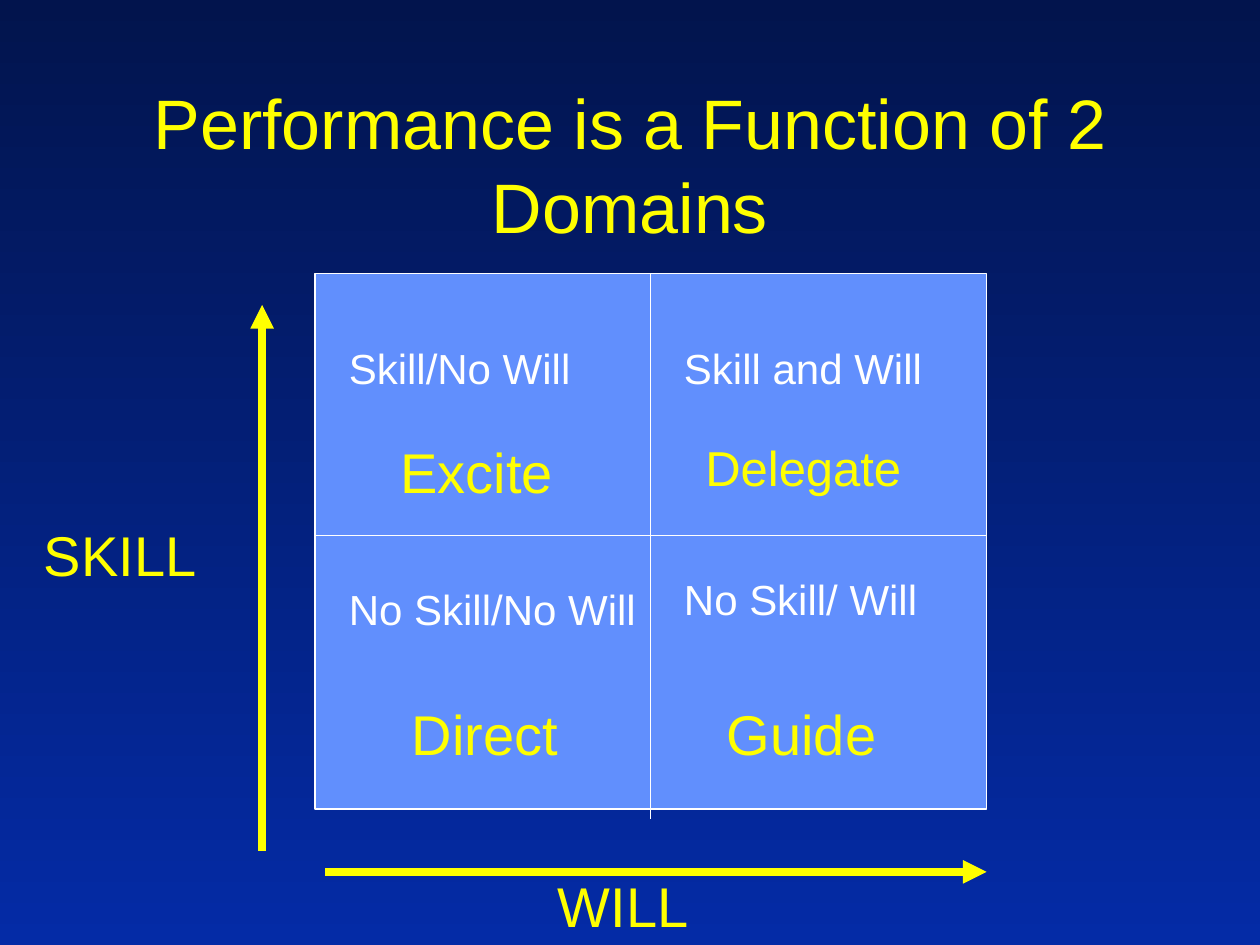
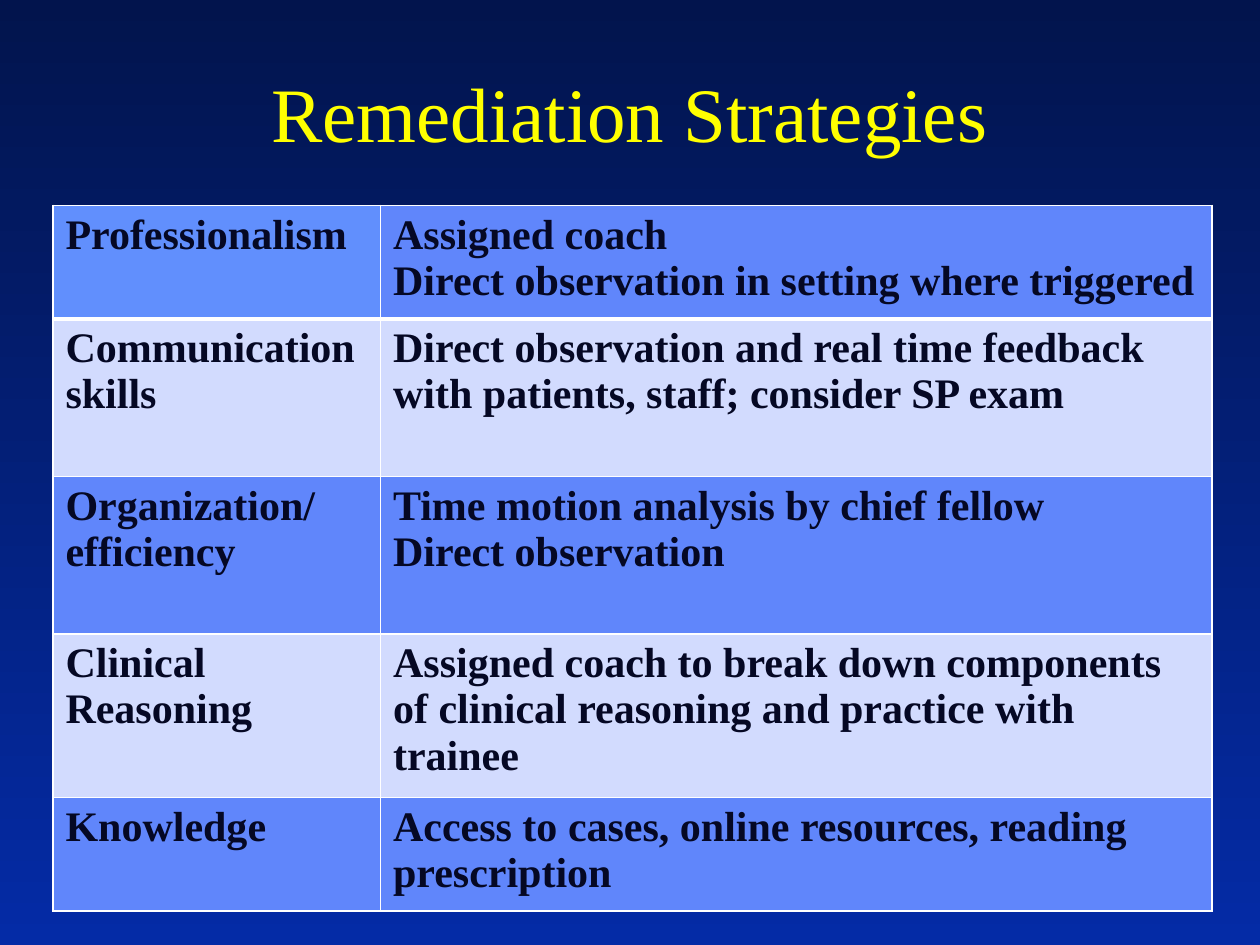
"""Build two slides on trainee performance domains and remediation strategies."""
from lxml import etree
from pptx import Presentation
from pptx.dml.color import RGBColor
from pptx.enum.shapes import MSO_CONNECTOR, MSO_SHAPE
from pptx.enum.text import MSO_ANCHOR, MSO_AUTO_SIZE, PP_ALIGN
from pptx.oxml.ns import qn
from pptx.util import Inches, Pt

STRAIGHT = MSO_CONNECTOR.STRAIGHT
RECTANGLE = MSO_SHAPE.RECTANGLE
MIDDLE = MSO_ANCHOR.MIDDLE
FIT_TEXT = MSO_AUTO_SIZE.SHAPE_TO_FIT_TEXT
CENTER = PP_ALIGN.CENTER

COLORS = {
    "night": "02144D",
    "royal": "042BA6",
    "yellow": "FFFF00",
    "white": "FFFFFF",
    "sky": "618FFD",
    "band": "6086FB",
    "pale": "D2DBFE",
    "ink": "050824",
}
SANS = "Arial"
SERIF = "Times New Roman"


def rgb(name):
    """Return the named colour."""
    return RGBColor.from_string(COLORS[name])


class Deck:
    """Hold the shared style and the current slide."""

    def __init__(self):
        """Start an empty 4:3 presentation."""
        self.prs = Presentation()
        self.prs.slide_width = Inches(10)
        self.prs.slide_height = Inches(7.5)
        self.slide = None

    def new_slide(self, title, top, font, size):
        """Add a slide with the gradient background and a centred title."""
        self.slide = self.prs.slides.add_slide(self.prs.slide_layouts[6])
        fill = self.slide.background.fill
        fill.gradient()
        fill.gradient_angle = 270
        for stop, name in zip(fill.gradient_stops, ("night", "royal")):
            stop.color.rgb = rgb(name)
        heading = self.slide.shapes.add_textbox(
            Inches(0.75), Inches(top), Inches(8.5), Inches(1.25))
        frame = heading.text_frame
        frame.word_wrap = True
        frame.vertical_anchor = MIDDLE
        self.set_text(frame, title, font, size, "yellow")
        frame.paragraphs[0].alignment = CENTER

    def set_text(self, frame, text, font, size, color, bold=False):
        """Set the text of a frame and format its runs."""
        frame.text = text
        for paragraph in frame.paragraphs:
            for run in paragraph.runs:
                run.font.name = font
                run.font.size = Pt(size)
                run.font.bold = bold
                run.font.color.rgb = rgb(color)

    def label(self, text, left, top, width, height, size, color="yellow"):
        """Add a single-line label."""
        box = self.slide.shapes.add_textbox(
            Inches(left), Inches(top), Inches(width), Inches(height))
        frame = box.text_frame
        frame.word_wrap = False
        frame.auto_size = FIT_TEXT
        self.set_text(frame, text, SANS, size, color)

    def panel(self, left, top, width, height):
        """Add a filled rectangle with a white outline."""
        shape = self.slide.shapes.add_shape(
            RECTANGLE, Inches(left), Inches(top), Inches(width), Inches(height))
        shape.shadow.inherit = False
        shape.fill.solid()
        shape.fill.fore_color.rgb = rgb("sky")
        shape.line.color.rgb = rgb("white")
        shape.line.width = Pt(0.75)
        return shape

    def line(self, start, end, color="white", width=0.75, arrow=False):
        """Add a straight line, with an arrowhead at its end if asked."""
        connector = self.slide.shapes.add_connector(
            STRAIGHT, *(Inches(value) for value in start + end))
        connector.line.color.rgb = rgb(color)
        connector.line.width = Pt(width)
        properties = connector._element.spPr
        if arrow:
            etree.SubElement(properties.find(qn("a:ln")), qn("a:tailEnd"), type="triangle")
        etree.SubElement(properties, qn("a:effectLst"))
        return connector

    def cell(self, cell, text, fill, borders):
        """Fill a table cell and draw its borders, given as points by side."""
        properties = cell._tc.get_or_add_tcPr()
        for side, points in borders.items():
            border = etree.SubElement(properties, qn(f"a:ln{side}"), w=str(Pt(points)))
            solid = etree.SubElement(border, qn("a:solidFill"))
            etree.SubElement(solid, qn("a:srgbClr"), val=COLORS["white"])
        cell.fill.solid()
        cell.fill.fore_color.rgb = rgb(fill)
        self.set_text(cell.text_frame, text, SERIF, 24, "ink", bold=True)

    def table(self, rows, left, top, widths, heights):
        """Add a banded table with a thick rule below its first row."""
        table = self.slide.shapes.add_table(
            len(rows), len(widths), Inches(left), Inches(top),
            Inches(sum(widths)), Inches(sum(heights))).table
        table.first_row = table.horz_banding = False
        for column, width in zip(table.columns, widths):
            column.width = Inches(width)
        for r, (texts, height) in enumerate(zip(rows, heights)):
            table.rows[r].height = Inches(height)
            borders = {"L": 1, "R": 1, "T": 3 if r == 1 else 1, "B": 3 if r == 0 else 1}
            for c, text in enumerate(texts):
                fill = "pale" if r % 2 else "band"
                if r == c == 0:
                    fill = "sky"
                self.cell(table.cell(r, c), text, fill, borders)


def performance_slide(deck):
    """Draw the skill and will matrix."""
    deck.new_slide("Performance is a Function of 2 Domains", 0.67, SANS, 40)
    left, top, width, height = 2.5, 2.17, 5.33, 4.25
    right, center = left + width, left + width / 2
    matrix = deck.panel(left, top, width, height)
    divider = deck.line((center, top), (center, 6.5))
    divider.begin_connect(matrix, 0)
    deck.line((left, 4.25), (right, 4.25))

    deck.label("SKILL", 0.25, 4.08, 1.41, 0.63, 32)
    deck.label("WILL", 4.33, 6.87, 1.24, 0.63, 32)
    for start, end in (((2.58, 6.92), (right, 6.92)), ((2.08, 6.75), (2.08, 2.42))):
        deck.line(start, end, "yellow", 4.5, arrow=True)

    actions = (
        ("Delegate", 5.5, 3.42, 1.76, 0.57, 28),
        ("Direct", 3.17, 5.5, 1.36, 0.63, 32),
        ("Guide", 5.67, 5.5, 1.39, 0.63, 32),
        ("Excite", 3.08, 3.42, 1.41, 0.63, 32),
    )
    for action in actions:
        deck.label(*action)

    states = (
        ("Skill/No Will", 2.67, 2.67, 1.96),
        ("Skill and Will", 5.33, 2.67, 2.09),
        ("No Skill/No Will", 2.67, 4.58, 2.48),
        ("No Skill/ Will", 5.33, 4.5, 2.06),
    )
    for state in states:
        deck.label(*state, 0.5, 24, "white")


def remediation_slide(deck):
    """Draw the table of remediation strategies."""
    deck.new_slide("Remediation Strategies", 0.26, SERIF, 44)
    strategies = (
        ("Professionalism",
         "Assigned coach\nDirect observation in setting where triggered"),
        ("Communication skills",
         "Direct observation and real time feedback with patients, staff; consider SP exam"),
        ("Organization/\nefficiency",
         "Time motion analysis by chief fellow\nDirect observation"),
        ("Clinical Reasoning",
         "Assigned coach to break down components of clinical reasoning "
         "and practice with trainee"),
        ("Knowledge",
         "Access to cases, online resources, reading prescription"),
    )
    deck.table(strategies, 0.42, 1.63, (2.6, 6.6), (0.59, 1.25, 1.25, 1.25, 0.86))


def main():
    """Build and save the presentation."""
    deck = Deck()
    performance_slide(deck)
    remediation_slide(deck)
    deck.prs.save("out.pptx")


if __name__ == "__main__":
    main()
